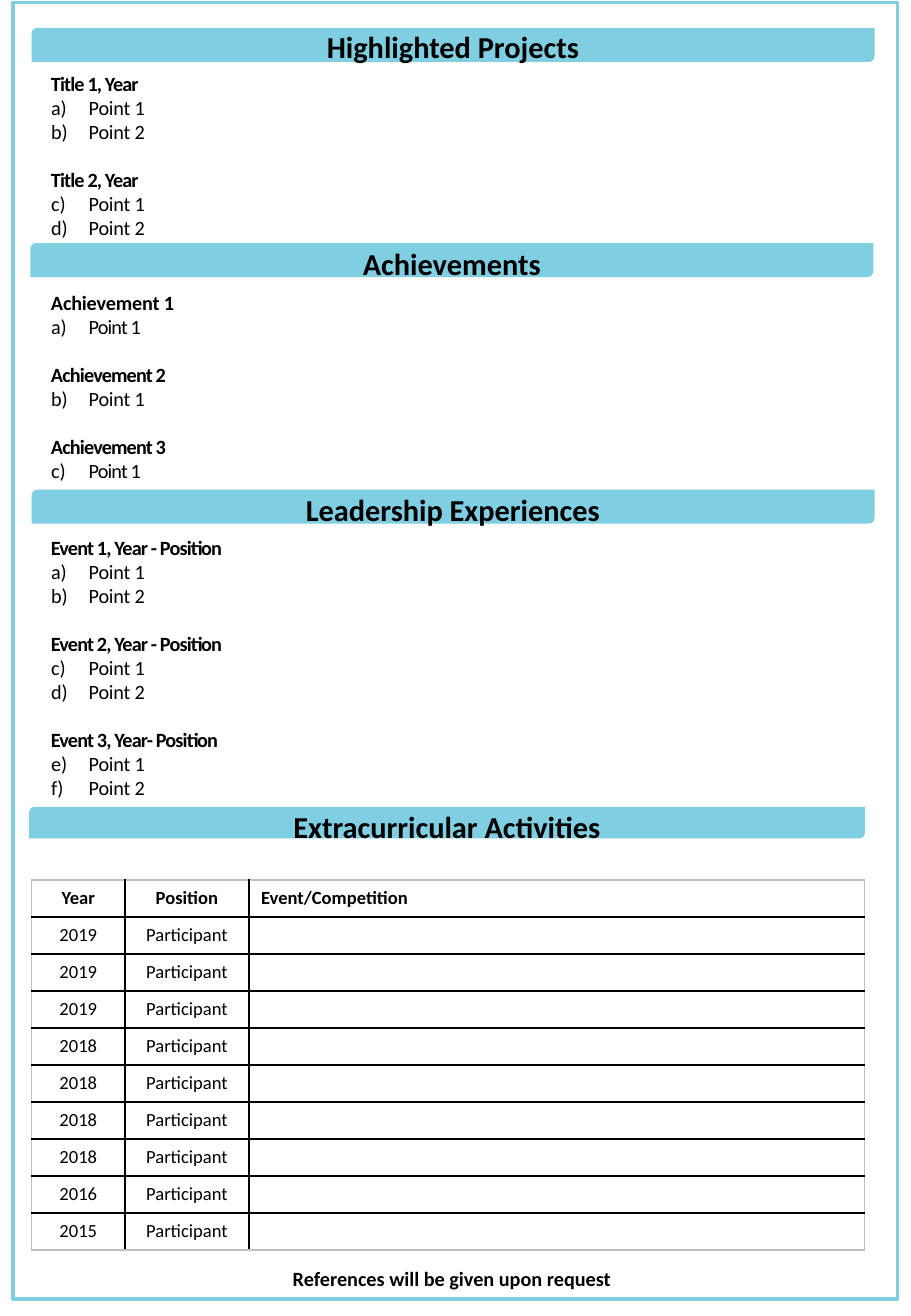
from lxml import etree
from pptx import Presentation
from pptx import util as u
from pptx.dml.color import RGBColor
from pptx.enum import shapes, text
from pptx.oxml import ns

INK = {"bar": "7FCEE1", "text": "000000", "edge": "BFBFBF"}


def tone(name):
    return RGBColor.from_string(INK[name])


def box(*dims):
    return [u.Inches(d) for d in dims]


class Sheet:
    """Holds the style and the current slide."""

    font = "Calibri"

    def __init__(self, deck):
        self.page = deck.slides.add_slide(deck.slide_layouts[4])
        self.shapes = self.page.shapes
        self.slots = [s for s in self.page.placeholders
                      if s.placeholder_format.idx > 0]

    def style(self, para, size, bold=False, gap=0):
        for run in para.runs:
            font = run.font
            font.name, font.size, font.bold = self.font, u.Pt(size), bold
            font.color.rgb = tone("text")
            if gap:
                run._r.get_or_add_rPr().set("spc", str(gap))

    def place(self, slot, dims):
        """Move a placeholder to the front, at the given place."""
        slot.left, slot.top, slot.width, slot.height = box(*dims)
        slot.element.getparent().append(slot.element)
        frame = slot.text_frame
        frame.word_wrap = True
        frame.auto_size = text.MSO_AUTO_SIZE.NONE
        frame.vertical_anchor = text.MSO_ANCHOR.TOP
        return frame

    def frame(self, *dims):
        rect = self.shapes.add_shape(shapes.MSO_SHAPE.RECTANGLE, *box(*dims))
        rect.shadow.inherit = False
        rect.fill.background()
        rect.line.color.rgb = tone("bar")
        rect.line.width = u.Pt(2.25)

    def bar(self, label, *dims, title=False):
        bar = self.shapes.add_shape(
            shapes.MSO_SHAPE.ROUND_2_DIAG_RECTANGLE, *box(*dims))
        bar.shadow.inherit = False
        bar.fill.solid()
        bar.fill.fore_color.rgb = tone("bar")
        bar.line.fill.background()
        frame = self.place(self.shapes.title if title else bar, dims)
        frame.margin_left = frame.margin_right = 0
        frame.margin_top = frame.margin_bottom = 0
        frame.text = label
        para = frame.paragraphs[0]
        para.alignment = text.PP_ALIGN.CENTER
        self.style(para, 18, True)

    def line(self, para, words, left, hang=0, bold=False, gap=0, before=0):
        para.text = words
        para.alignment = text.PP_ALIGN.LEFT
        para.line_spacing = u.Pt(14.2)
        para.space_before = u.Pt(before)
        prop = para._p.get_or_add_pPr()
        prop.set("marL", str(u.Inches(left)))
        prop.set("indent", str(u.Inches(hang)))
        if hang:
            mark = etree.SubElement(prop, ns.qn("a:buFont"))
            mark.set("typeface", "+mj-lt")
            mark = etree.SubElement(prop, ns.qn("a:buAutoNum"))
            mark.set("type", "alphaLcParenR")
        else:
            etree.SubElement(prop, ns.qn("a:buNone"))
        self.style(para, 12, bold, gap)

    def list(self, items, *dims, pad=0.26):
        """Fill the next body placeholder with headings and their points."""
        frame = self.place(self.slots.pop(0), dims)
        for i, (head, tight, points, snug) in enumerate(items):
            para = frame.add_paragraph() if i else frame.paragraphs[0]
            self.line(para, head, pad, bold=True, gap=tight,
                      before=14.2 if i else 0)
            for point in points:
                self.line(frame.add_paragraph(), point, 0.57, -0.31, gap=snug)

    def table(self, rows, widths, *dims):
        table = self.shapes.add_table(
            len(rows), len(widths), *box(*dims)).table
        table.first_row = table.horz_banding = False
        for col, width in zip(table.columns, widths):
            col.width = u.Inches(width)
        for r, row in enumerate(rows):
            for c, words in enumerate(row):
                outer = {"L": c == 0, "R": c == len(widths) - 1,
                         "T": r == 0, "B": r == len(rows) - 1}
                self.cell(table.cell(r, c), words, r == 0, c < 2, outer)

    def cell(self, cell, words, bold, mid, outer):
        cell.margin_top = cell.margin_bottom = 0
        cell.vertical_anchor = text.MSO_ANCHOR.MIDDLE
        para = cell.text_frame.paragraphs[0]
        para.text = words
        para.alignment = text.PP_ALIGN.CENTER if mid else text.PP_ALIGN.LEFT
        self.style(para, 11, bold)
        if not words:
            etree.SubElement(para._p, ns.qn("a:endParaRPr")).set("sz", "1100")
        # Borders: grey outside, black inside
        prop = cell._tc.get_or_add_tcPr()
        for side, rim in outer.items():
            edge = etree.SubElement(prop, ns.qn("a:ln" + side))
            edge.set("w", str(u.Pt(1)))
            fill = etree.SubElement(edge, ns.qn("a:solidFill"))
            shade = etree.SubElement(fill, ns.qn("a:srgbClr"))
            shade.set("val", INK["edge" if rim else "text"])
        cell.fill.background()


def main():
    deck = Presentation()
    deck.slide_width, deck.slide_height = box(7.5, 10.83)
    sheet = Sheet(deck)
    sheet.frame(0.11, 0.02, 7.28, 10.67)

    # Section bars
    sheet.bar("Highlighted Projects", 0.26, 0.23, 6.94, 0.28, title=True)
    sheet.bar("Achievements", 0.25, 2, 6.94, 0.28)
    sheet.bar("Leadership Experiences", 0.26, 4.03, 6.94, 0.28)
    sheet.bar("Extracurricular Activities", 0.24, 6.64, 6.88, 0.26)

    # Lists: heading, its letter gap, points, their letter gap
    pair = ["Point 1", "Point 2"]
    sheet.list([(f"Title {n}, Year", -50, pair, -10) for n in (1, 2)],
               0.06, 0.54, 7.24, 1.67)
    gaps = [(-10, -50), (-50, -10), (-50, -50)]
    sheet.list([(f"Achievement {n}", head, pair[:1], point)
                for n, (head, point) in enumerate(gaps, 1)],
               0.06, 2.34, 7.24, 1.67)
    events = ["Event 1, Year - Position", "Event 2, Year - Position",
              "Event 3, Year- Position"]
    sheet.list([(event, -50, pair, -10) for event in events],
               0.06, 4.36, 7.24, 2.26)

    # Activities
    years = [2019] * 3 + [2018] * 4 + [2016, 2015]
    rows = [("Year", "Position", "Event/Competition")]
    rows += [(str(year), "Participant", "") for year in years]
    sheet.table(rows, [0.77, 1.02, 5.07], 0.26, 7.24, 6.86, 3.05)

    # Closing line
    sheet.list([("References will be given upon request", 0, [], 0)],
               2.31, 10.37, 4.42, 0.3, pad=0)
    deck.save("out.pptx")


if __name__ == "__main__":
    main()
